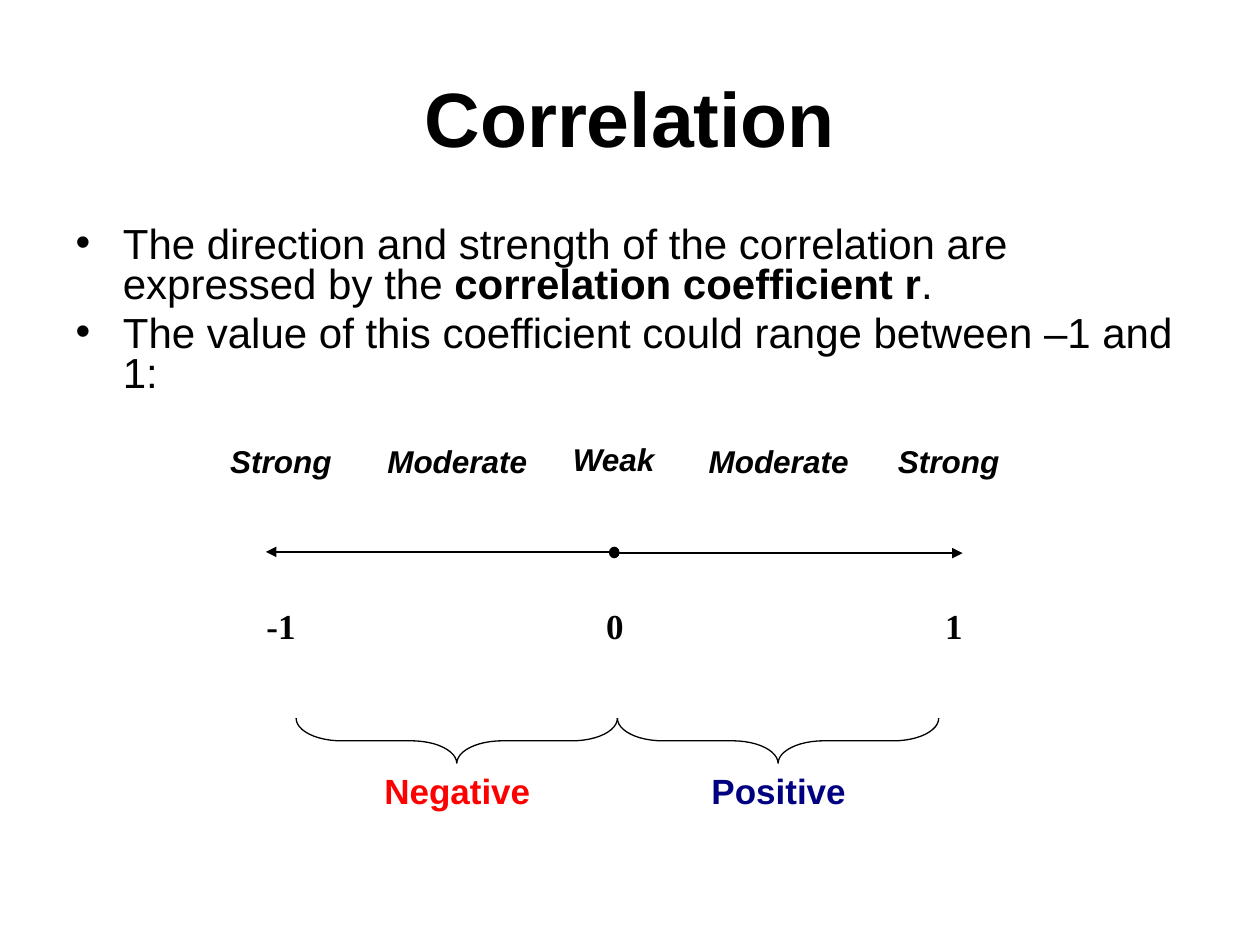
from lxml import etree
from pptx import Presentation
from pptx import util as u
from pptx.dml import color
from pptx.enum import shapes, text
from pptx.oxml import ns

BLACK, WHITE, RED, NAVY = "000000", "FFFFFF", "FF0000", "000080"
STRENGTH = {"name": "Arial", "size": u.Pt(18), "bold": True, "italic": True}
SCALE = {"name": "Times New Roman", "size": u.Pt(20), "bold": True}
SIGN = {"name": "Arial", "size": u.Pt(20), "bold": True}
TITLE = {"name": "Arial", "size": u.Pt(44), "bold": True}
BODY = {"name": "Arial", "size": u.Pt(24)}


def rgb(value):
    """Turn a hex string into a colour."""
    return color.RGBColor.from_string(value)


def inches(*lengths):
    """Convert lengths in inches."""
    return [u.Inches(length) for length in lengths]


def format_font(font, values, hue=BLACK):
    """Apply format values and a colour to a font."""
    for name, value in values.items():
        setattr(font, name, value)
    font.color.rgb = rgb(hue)


def place(holder, box):
    """Move a placeholder to a box and keep its text size fixed."""
    holder.left, holder.top, holder.width, holder.height = inches(*box)
    holder.text_frame.auto_size = text.MSO_AUTO_SIZE.NONE


def write_title(holder, box, words):
    """Fill the title placeholder."""
    place(holder, box)
    holder.text_frame.vertical_anchor = text.MSO_ANCHOR.MIDDLE
    para = holder.text_frame.paragraphs[0]
    para.alignment = text.PP_ALIGN.CENTER
    span = para.add_run()
    span.text = words
    format_font(span.font, TITLE)


def write_bullets(holder, box, bullets):
    """Fill the body placeholder; each bullet is a list of (words, bold)."""
    place(holder, box)
    frame = holder.text_frame
    for index, spans in enumerate(bullets):
        para = frame.add_paragraph() if index else frame.paragraphs[0]
        para.line_spacing = 0.8
        for words, bold in spans:
            span = para.add_run()
            span.text = words
            format_font(span.font, {**BODY, "bold": bold})


def add_label(slide, box, words, values, hue=BLACK):
    """Add a white box with centred text at its top."""
    label = slide.shapes.add_textbox(*inches(*box))
    label.fill.solid()
    label.fill.fore_color.rgb = rgb(WHITE)
    label.text_frame.word_wrap = True
    para = label.text_frame.paragraphs[0]
    para.alignment = text.PP_ALIGN.CENTER
    span = para.add_run()
    span.text = words
    format_font(span.font, values, hue)


def add_arrow(slide, start, end, y):
    """Add a level arrow with a dot at its start."""
    arrow = slide.shapes.add_connector(
        shapes.MSO_CONNECTOR.STRAIGHT, *inches(start, y, end, y))
    arrow.line.color.rgb = rgb(BLACK)
    arrow.line.width = u.Pt(1)
    line = arrow.line._get_or_add_ln()
    for tag, kind in (("a:headEnd", "oval"), ("a:tailEnd", "triangle")):
        etree.SubElement(line, ns.qn(tag), type=kind, w="med", len="med")
    etree.SubElement(arrow._element.spPr, ns.qn("a:effectLst"))


def add_brace(slide, box):
    """Add a brace pointing down that fills the given box."""
    left, top, width, height = box
    shift = (width - height) / 2
    brace = slide.shapes.add_shape(
        shapes.MSO_SHAPE.RIGHT_BRACE,
        *inches(left + shift, top - shift, height, width))
    brace.rotation = 90
    brace.adjustments[0], brace.adjustments[1] = 1, 0.5
    brace.shadow.inherit = False
    brace.fill.background()
    brace.line.color.rgb = rgb(BLACK)
    brace.line.width = u.Pt(0.75)


def draw_scale(slide, box):
    """Draw the axis from -1 to 1 with strengths above and signs below."""
    left, top, width, height = box
    center = left + width / 2
    step = 2.55
    add_arrow(slide, center, left + width, top + 0.95)
    add_arrow(slide, center, left, top + 0.94)
    for words, middle, size in (("0", 4.88, 0.64), ("1", 7.57, 0.64), ("-1", 2.23, 0.85)):
        add_label(slide, (middle - size / 2, top + 1.31, size, 0.95), words, SCALE)
    for index, (words, hue) in enumerate((("Negative", RED), ("Positive", NAVY))):
        start = left + 0.24 + index * step
        add_brace(slide, (start, top + 2.26, step, 0.36))
        add_label(slide, (start + 0.43, top + 2.62, 1.7, height - 2.62), words, SIGN, hue)
    for words, start, drop in (("Weak", 4.02, 0), ("Strong", 6.68, 0.02),
                               ("Strong", 1.38, 0.02), ("Moderate", 5.33, 0.02),
                               ("Moderate", 2.78, 0.02)):
        add_label(slide, (start, top + drop, 1.7, 0.73), words, STRENGTH)


def main():
    """Build the slide and save the deck."""
    deck = Presentation()
    deck.slide_width, deck.slide_height = inches(10, 7.5)
    page = deck.slides.add_slide(deck.slide_layouts[1])
    write_title(page.shapes.title, (0.5, 0.3, 9, 1.25), "Correlation")
    write_bullets(page.placeholders[1], (0.5, 1.75, 9, 4.95), [
        [("The direction and strength of the correlation are expressed by the ", False),
         ("correlation coefficient r", True), (".", False)],
        [("The value of this coefficient could range between –1 and 1:", False)],
    ])
    draw_scale(page, (2.11, 3.44, 5.53, 3.71))
    deck.save("out.pptx")


if __name__ == "__main__":
    main()
